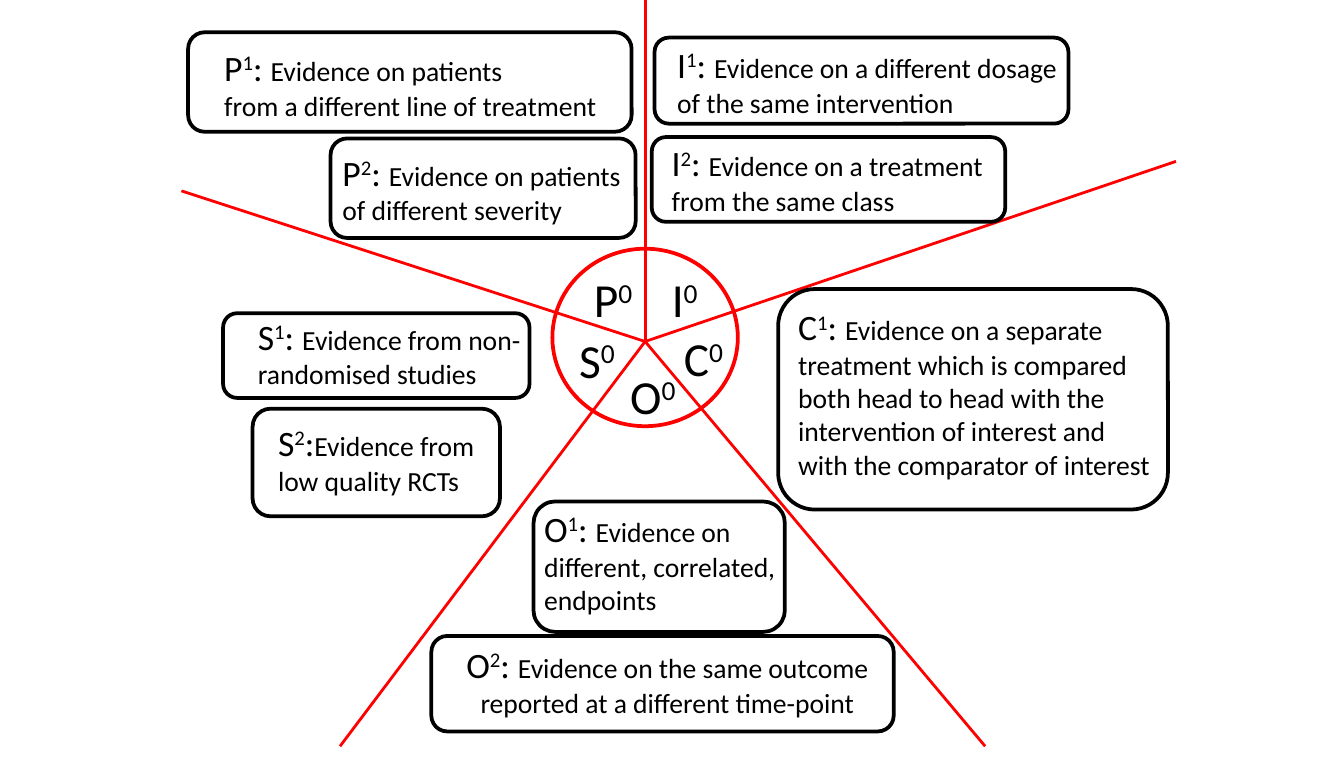
from pptx import Presentation
from pptx.dml.color import RGBColor as RGB
from pptx.enum.shapes import MSO_CONNECTOR as Link, MSO_SHAPE as Kind
from pptx.enum.text import PP_ALIGN as Align
from pptx.util import Inches, Pt
from lxml import etree

INK = {"text": "000000", "box": "FFFFFF", "edge": "000000", "wheel": "FF0000"}
FONT = "Calibri"
NS = "{http://schemas.openxmlformats.org/drawingml/2006/main}"

deck = Presentation()
deck.slide_width, deck.slide_height = Inches(10), Inches(5.63)
slide = deck.slides.add_slide(deck.slide_layouts[6])
shapes = slide.shapes


def add_panel(kind, place, edge):
    panel = shapes.add_shape(kind, *map(Inches, place))
    panel.shadow.inherit = False
    panel.fill.solid()
    panel.fill.fore_color.rgb = RGB.from_string(INK["box"])
    panel.line.color.rgb = RGB.from_string(INK[edge])
    panel.line.width = Pt(2)


def add_text(place, lines, wrap=True, align=Align.LEFT):
    frame = shapes.add_textbox(*map(Inches, place)).text_frame
    frame.word_wrap = wrap
    for i, parts in enumerate(lines):
        para = frame.add_paragraph() if i else frame.paragraphs[0]
        para.alignment = align
        para.font.name = FONT
        para.font.color.rgb = RGB.from_string(INK["text"])
        for text, size, raised in parts:
            run = para.add_run()
            run.text = text
            run.font.size = Pt(size)
            if raised:
                run._r.get_or_add_rPr().set("baseline", "30000")


add_panel(Kind.OVAL, (4.11, 1.85, 1.38, 1.32), "wheel")
hubs = [
    ("P", 4.32, 1.96, 0.51),
    ("I", 4.9, 1.96, 0.41),
    ("S", 4.21, 2.41, 0.49),
    ("O", 4.59, 2.68, 0.56),
    ("C", 4.99, 2.4, 0.53),
]
for name, left, top, width in hubs:
    add_text((left, top, width, 0.53),
             [[(name, 25.4, False), ("0", 25.4, True)]], wrap=False)

for end in [(4.8, 0), (1.35, 1.42), (8.75, 1.2), (2.53, 5.55), (7.33, 5.55)]:
    spoke = shapes.add_connector(Link.STRAIGHT, *map(Inches, (4.8, 2.54, *end)))
    spoke.line.color.rgb = RGB.from_string(INK["wheel"])
    spoke.line.width = Pt(1.5)
    etree.SubElement(spoke._element.spPr, NS + "effectLst")

notes = [
    ("O", "1", ": ", (3.97, 3.73, 1.87, 0.97), (3.95, 3.72, 2.21, 0.92),
     ["Evidence on different, correlated, endpoints"]),
    ("O", "2", ": ", (3.21, 4.73, 3.44, 0.71), (3.28, 4.73, 3.37, 0.67),
     ["Evidence on the same outcome reported at a different time-point"]),
    ("P", "1", ": ", (1.4, 0.24, 3.3, 0.74), (1.57, 0.29, 3.2, 0.67),
     ["Evidence on patients", "from a different line of treatment"]),
    ("S", "1", ": ", (1.66, 2.33, 2.28, 0.63), (1.82, 2.29, 2.32, 0.67),
     ["Evidence from non-randomised studies"]),
    ("I", "1", ": ", (4.87, 0.28, 3.08, 0.64), (4.94, 0.27, 3.15, 0.67),
     ["Evidence on a different dosage of the same intervention"]),
    ("I", "2", ": ", (4.85, 1.02, 2.63, 0.63), (4.9, 1, 2.63, 0.92),
     ["Evidence on a treatment from the same class"]),
    ("C", "1", ": ", (5.79, 2.15, 2.9, 1.64), (5.84, 2.22, 2.85, 1.42),
     ["Evidence on a separate", "treatment which is compared",
      "both head to head with the intervention of interest and",
      "with the comparator of interest"]),
    ("P", "2", ": ", (2.46, 1.03, 2.27, 0.74), (2.45, 1.07, 2.47, 0.67),
     ["Evidence on patients", "of different severity"]),
    ("S", "2", ":", (1.88, 3.04, 1.84, 0.8), (1.97, 3.08, 1.72, 0.67),
     ["Evidence from low quality RCTs"]),
]
for name, level, colon, box, place, (first, *rest) in notes:
    add_panel(Kind.ROUNDED_RECTANGLE, box, "edge")
    head = [(name, 19.1, False), (level, 19.1, True), (colon, 19.1, False),
            (first, 14.8, False)]
    align = Align.CENTER if name + level == "O2" else Align.LEFT
    add_text(place, [head] + [[(line, 14.8, False)] for line in rest], align=align)

deck.save("out.pptx")
